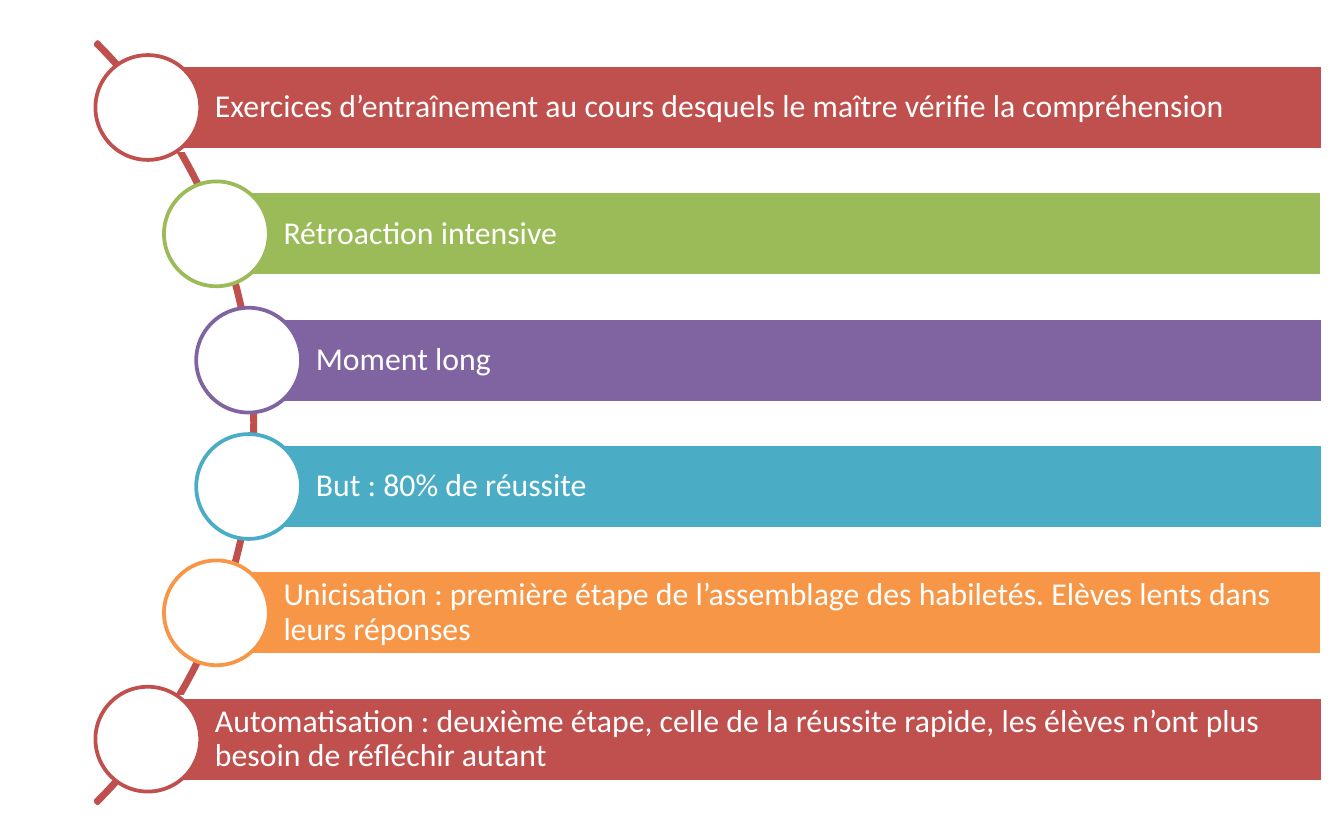
from pptx import Presentation
from pptx.dml.color import RGBColor
from pptx.enum.shapes import MSO_SHAPE as Shape
from pptx.enum.text import MSO_ANCHOR as Anchor, PP_ALIGN as Align
from pptx.util import Inches, Pt

WHITE = RGBColor(0xFF, 0xFF, 0xFF)
RED = RGBColor(0xC0, 0x50, 0x4D)
GREEN = RGBColor(0x9B, 0xBB, 0x59)
PURPLE = RGBColor(0x80, 0x64, 0xA2)
BLUE = RGBColor(0x4B, 0xAC, 0xC6)
ORANGE = RGBColor(0xF7, 0x96, 0x46)

# Content: text, colour, x of the circle's centre
STEPS = [
    ("Exercices d’entraînement au cours desquels le maître vérifie la compréhension", RED, 1.1),
    ("Rétroaction intensive", GREEN, 1.61),
    ("Moment long", PURPLE, 1.85),
    ("But : 80% de réussite", BLUE, 1.85),
    ("Unicisation : première étape de l’assemblage des habiletés. "
     "Elèves lents dans leurs réponses", ORANGE, 1.61),
    ("Automatisation : deuxième étape, celle de la réussite rapide, "
     "les élèves n’ont plus besoin de réfléchir autant", RED, 1.1),
]

# Layout in inches
FIRST_CENTRE, STEP_GAP = 0.8, 0.94
BAR_HEIGHT, BAR_RIGHT = 0.63, 9.84
CIRCLE = 0.78
ARC_LEFT, ARC_TOP, ARC_SIZE = -6.11, -0.86, 8.01


def add_part(slide, kind, left, top, width, height, fill, line):
    part = slide.shapes.add_shape(
        kind, Inches(left), Inches(top), Inches(width), Inches(height))
    part.shadow.inherit = False
    if fill is None:
        part.fill.background()
    else:
        part.fill.solid()
        part.fill.fore_color.rgb = fill
    part.line.color.rgb = line
    part.line.width = Pt(2)
    return part


def write_text(part, text, size=17, font="Calibri", color=WHITE, indent=0.5, margin=0.05):
    frame = part.text_frame
    frame.word_wrap = True
    frame.vertical_anchor = Anchor.MIDDLE
    frame.margin_left = Inches(indent)
    frame.margin_top = frame.margin_right = frame.margin_bottom = Inches(margin)
    paragraph = frame.paragraphs[0]
    paragraph.alignment = Align.LEFT
    paragraph.line_spacing = 0.9
    run = paragraph.add_run()
    run.text = text
    run.font.size = Pt(size)
    run.font.name = font
    run.font.color.rgb = color


def main():
    deck = Presentation()
    deck.slide_width, deck.slide_height = Inches(10), Inches(6.25)
    slide = deck.slides.add_slide(deck.slide_layouts[6])

    # Arc behind the steps, from 315 to 45 degrees
    arc = add_part(slide, Shape.BLOCK_ARC, ARC_LEFT, ARC_TOP, ARC_SIZE, ARC_SIZE, None, RED)
    for index, value in enumerate((189, 27, 0.003)):
        arc.adjustments[index] = value

    # One bar and one circle per step
    for row, (text, color, centre_x) in enumerate(STEPS):
        centre_y = FIRST_CENTRE + row * STEP_GAP
        bar = add_part(slide, Shape.RECTANGLE, centre_x, centre_y - BAR_HEIGHT / 2,
                       BAR_RIGHT - centre_x, BAR_HEIGHT, color, WHITE)
        write_text(bar, text)
        add_part(slide, Shape.OVAL, centre_x - CIRCLE / 2, centre_y - CIRCLE / 2,
                 CIRCLE, CIRCLE, WHITE, color)

    deck.save("out.pptx")


if __name__ == "__main__":
    main()
